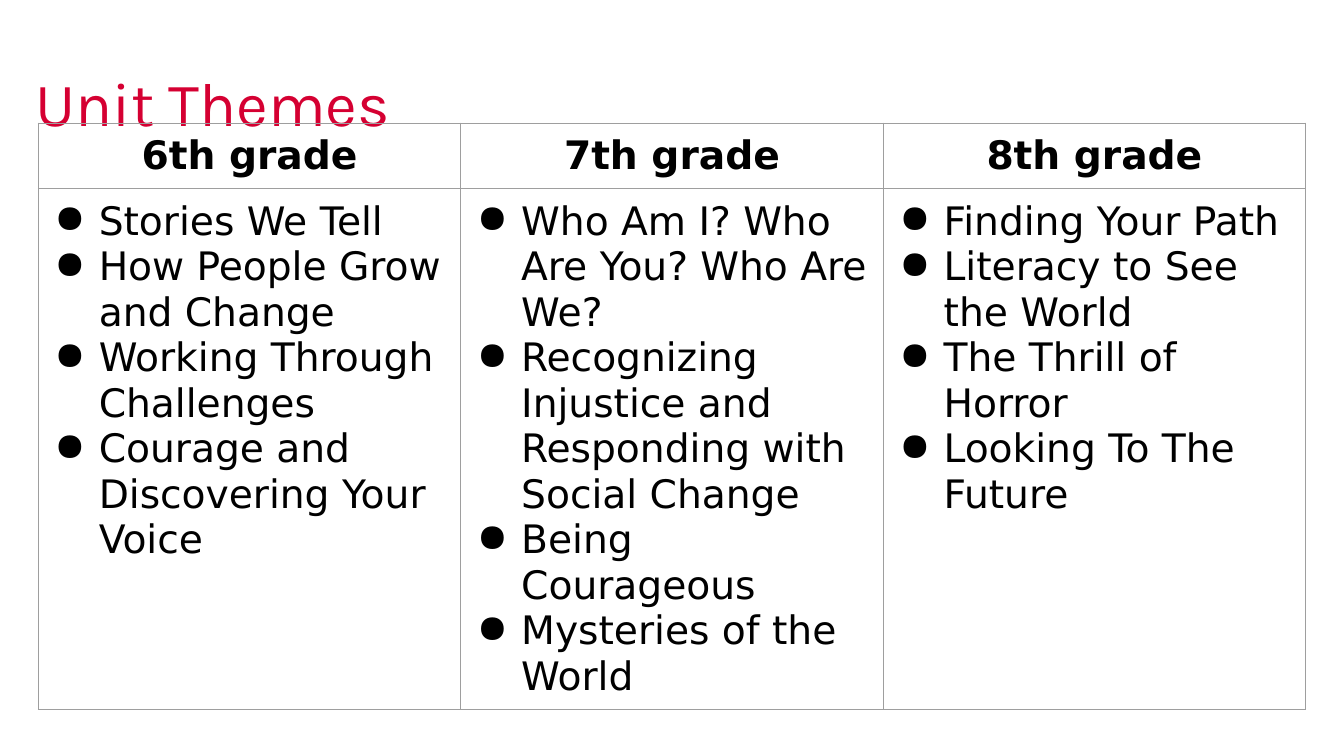
from lxml import etree
from pptx import Presentation
from pptx import util as u
from pptx.dml.color import RGBColor
from pptx.enum import text
from pptx.oxml import ns

RED = RGBColor(0xD5, 0x00, 0x32)
BLACK = RGBColor(0, 0, 0)
GREY = RGBColor(0x9E, 0x9E, 0x9E)

THEMES = {
    "6th grade": [
        "Stories We Tell",
        "How People Grow and Change",
        "Working Through Challenges",
        "Courage and Discovering Your Voice",
    ],
    "7th grade": [
        "Who Am I? Who Are You? Who Are We?",
        "Recognizing Injustice and Responding with Social Change",
        "Being Courageous",
        "Mysteries of the World",
    ],
    "8th grade": [
        "Finding Your Path",
        "Literacy to See the World",
        "The Thrill of Horror",
        "Looking To The Future",
    ],
}


def add_node(parent, tag, **attrs):
    return etree.SubElement(parent, ns.qn(tag), attrs)


def add_bullet(para):
    props = para._p.get_or_add_pPr()
    props.set("marL", str(u.Inches(0.5)))
    props.set("indent", str(u.Inches(-0.44)))
    add_node(add_node(props, "a:buClr"), "a:srgbClr", val=str(BLACK))
    add_node(props, "a:buChar", char="●")


def write(frame, lines, font="DejaVu Sans", size=28, color=BLACK, bold=False,
          align=text.PP_ALIGN.LEFT, bullet=False, spacing=None):
    for i, line in enumerate(lines):
        para = frame.paragraphs[0] if i == 0 else frame.add_paragraph()
        para.alignment = align
        if spacing:
            para.line_spacing = spacing
        if bullet:
            add_bullet(para)
        run = para.add_run()
        run.text = line
        run.font.name = font
        run.font.size = u.Pt(size)
        run.font.bold = bold
        run.font.color.rgb = color


def style_cell(cell):
    cell.margin_left = cell.margin_right = u.Inches(0.1)
    cell.margin_top = cell.margin_bottom = u.Inches(0.1)
    props = cell._tc.get_or_add_tcPr()
    for side in "LRTB":
        line = add_node(props, f"a:ln{side}", w=str(u.Pt(0.75)))
        add_node(add_node(line, "a:solidFill"), "a:srgbClr", val=str(GREY))
    cell.fill.background()


def add_title(slide, words):
    title = slide.shapes.title
    title.left, title.top = u.Inches(0.25), u.Inches(0.33)
    title.width, title.height = u.Inches(11.5), u.Inches(1.45)
    frame = title.text_frame
    frame.word_wrap = True
    frame.auto_size = text.MSO_AUTO_SIZE.NONE
    frame.vertical_anchor = text.MSO_ANCHOR.MIDDLE
    write(frame, [words], font="Karla", size=44, color=RED, spacing=0.9)


def add_grid(slide, themes):
    shape = slide.shapes.add_table(
        2, len(themes), u.Inches(0.38), u.Inches(1.22),
        u.Inches(12.57), u.Inches(6))
    table = shape.table
    table.first_row = table.horz_banding = False
    table.rows[0].height = u.Inches(0.6)
    table.rows[1].height = u.Inches(4.2)
    for col, (grade, units) in enumerate(themes.items()):
        head, body = table.cell(0, col), table.cell(1, col)
        style_cell(head)
        style_cell(body)
        write(head.text_frame, [grade], bold=True, align=text.PP_ALIGN.CENTER)
        write(body.text_frame, units, bullet=True)
    shape.height = u.Inches(6)


def main():
    deck = Presentation()
    deck.slide_width, deck.slide_height = u.Inches(13.33), u.Inches(7.5)
    slide = deck.slides.add_slide(deck.slide_layouts[5])
    add_title(slide, "Unit Themes")
    add_grid(slide, THEMES)
    deck.save("out.pptx")


if __name__ == "__main__":
    main()
